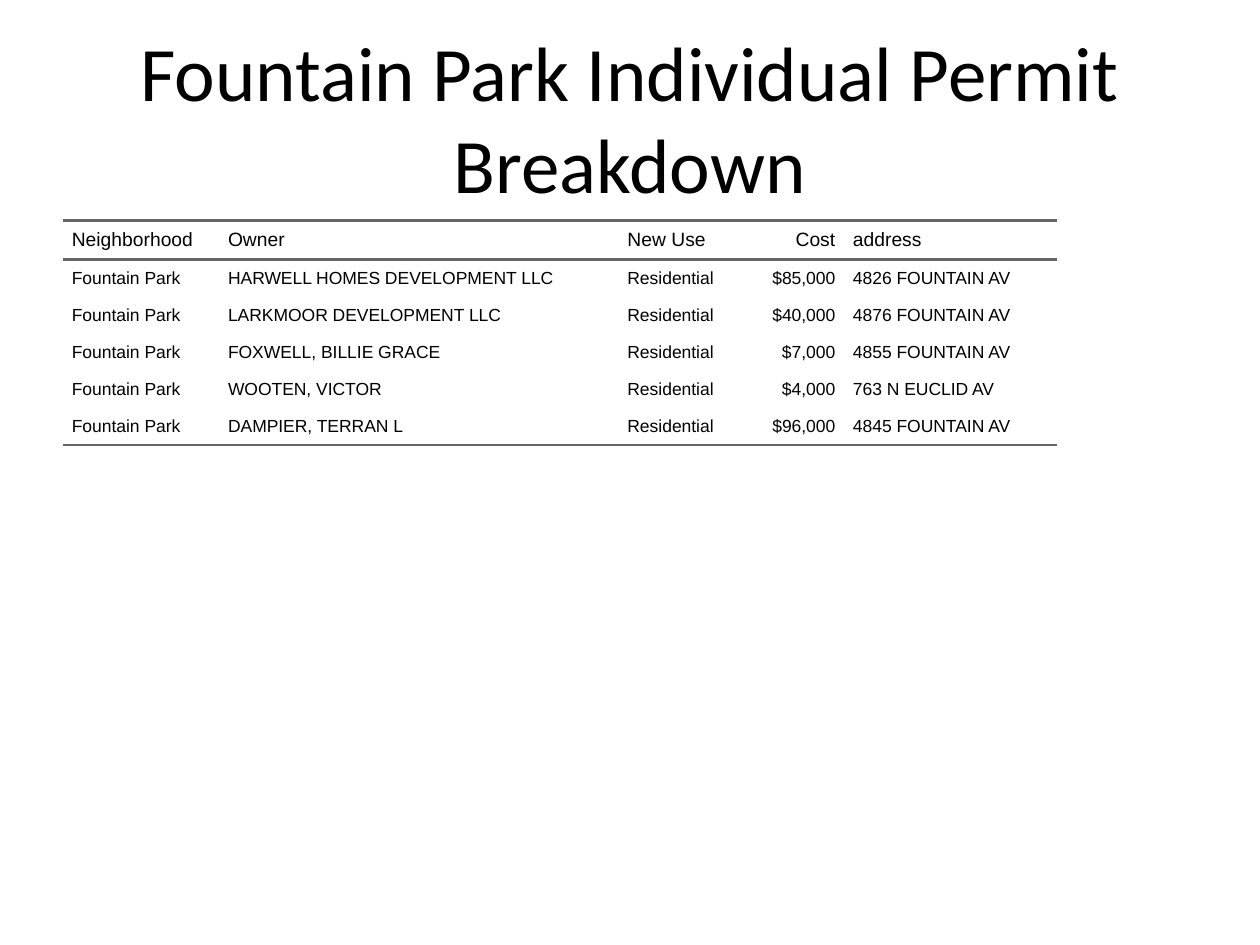
import pptx
import pptx.util
import pptx.oxml
import pptx.dml.color
import pptx.enum.text
from pptx.util import Inches, Pt

BLACK = pptx.dml.color.RGBColor(0x00, 0x00, 0x00)
RULE_GRAY = pptx.dml.color.RGBColor(0x66, 0x66, 0x66)
ALIGN = pptx.enum.text.PP_ALIGN
MIDDLE = pptx.enum.text.MSO_ANCHOR.MIDDLE
PLAIN_STYLE = "{2D5ABB26-0587-4C30-8999-92F81FD0307C}"
NAMESPACE = "http://schemas.openxmlformats.org/drawingml/2006/main"


def write(frame, text, size, font="Arial", align=ALIGN.LEFT, indent=0, spacing=0):
    paragraph = frame.paragraphs[0]
    paragraph.alignment = align
    paragraph.space_before = paragraph.space_after = Pt(spacing)
    properties = paragraph._p.get_or_add_pPr()
    for side in ("marL", "marR"):
        properties.set(side, str(Inches(indent)))
    properties.set("indent", "0")
    run = paragraph.add_run()
    run.text = text
    run.font.size = Pt(size)
    run.font.name = font
    run.font.color.rgb = BLACK


def add_rule(cell, edge):
    cell._tc.get_or_add_tcPr().append(pptx.oxml.parse_xml(
        f'<a:{edge} xmlns:a="{NAMESPACE}" w="{Pt(1.5)}"><a:solidFill>'
        f'<a:srgbClr val="{RULE_GRAY}"/></a:solidFill></a:{edge}>'))


presentation = pptx.Presentation()
presentation.slide_width = Inches(10)
presentation.slide_height = Inches(7.5)
slide = presentation.slides.add_slide(presentation.slide_layouts[5])

title = slide.shapes.title
title.left, title.top = Inches(0.5), Inches(0.3)
title.width, title.height = Inches(9), Inches(1.25)
title.text_frame.vertical_anchor = MIDDLE
write(title.text_frame, "Fountain Park Individual Permit Breakdown", 44,
      font="Calibri", align=ALIGN.CENTER)

headings = ["Neighborhood", "Owner", "New Use", "Cost", "address"]
column_widths = [1.24, 3.17, 1.04, 0.75, 1.69]
permits = [
    ("HARWELL HOMES DEVELOPMENT LLC", "$85,000", "4826 FOUNTAIN AV"),
    ("LARKMOOR DEVELOPMENT LLC", "$40,000", "4876 FOUNTAIN AV"),
    ("FOXWELL, BILLIE GRACE", "$7,000", "4855 FOUNTAIN AV"),
    ("WOOTEN, VICTOR", "$4,000", "763 N EUCLID AV"),
    ("DAMPIER, TERRAN L", "$96,000", "4845 FOUNTAIN AV"),
]
rows = [headings] + [["Fountain Park", owner, "Residential", cost, address]
                     for owner, cost, address in permits]

permit_frame = slide.shapes.add_table(
    len(rows), len(headings), Inches(0.5), Inches(1.75), Inches(9), Inches(4.95))
permit_table = permit_frame.table
permit_table.first_row = permit_table.horz_banding = False
permit_table._tbl.tblPr[0].text = PLAIN_STYLE
for column, width in zip(permit_table.columns, column_widths):
    column.width = Inches(width)
for row in permit_table.rows:
    row.height = Inches(0.25)
permit_frame.width, permit_frame.height = Inches(9), Inches(4.95)

for row_index, values in enumerate(rows):
    is_header = row_index == 0
    for column_index, value in enumerate(values):
        cell = permit_table.cell(row_index, column_index)
        cell.margin_left = cell.margin_right = 0
        cell.margin_top = cell.margin_bottom = Inches(0.07)
        cell.vertical_anchor = MIDDLE
        if is_header:
            add_rule(cell, "lnT")
        if is_header or row_index == len(permits):
            add_rule(cell, "lnB")
        cell.fill.background()
        write(cell.text_frame, value, 11 if is_header else 10,
              align=ALIGN.RIGHT if headings[column_index] == "Cost" else ALIGN.LEFT,
              indent=0.07, spacing=5)

presentation.save("out.pptx")
